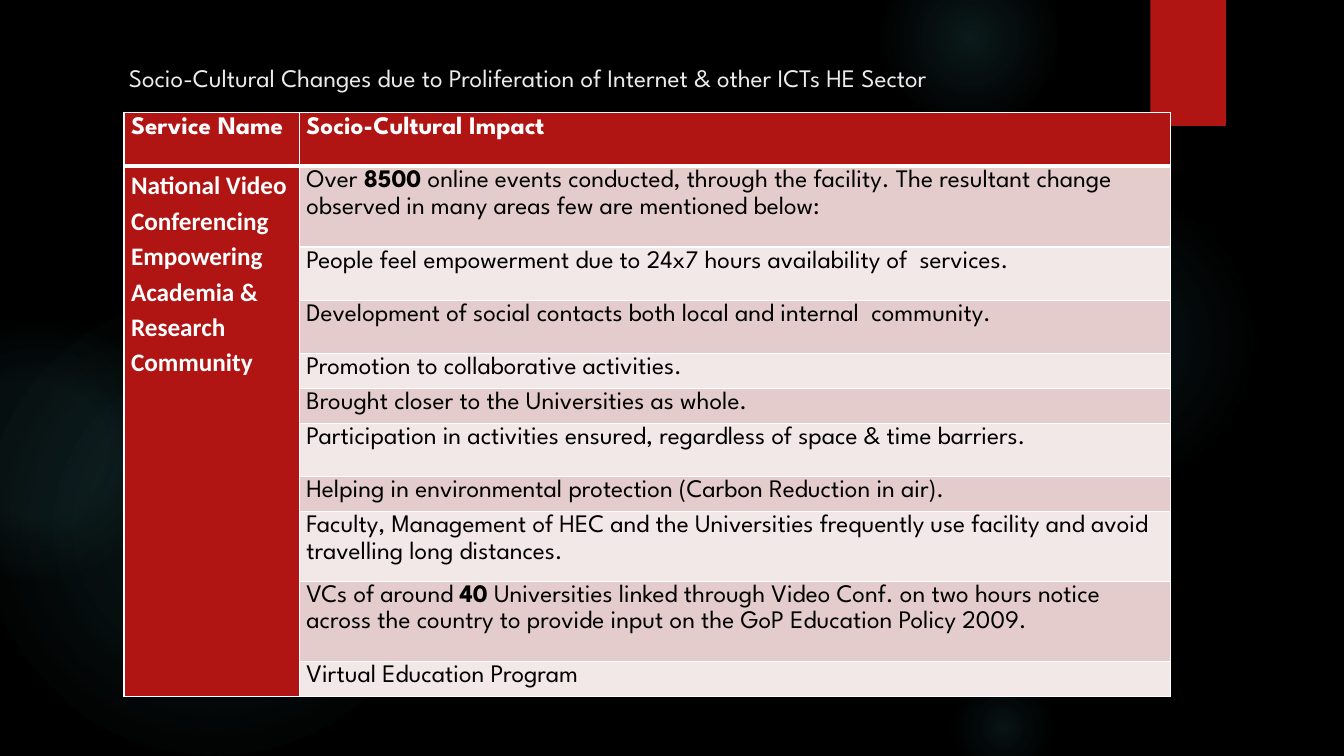
from lxml import etree
from pptx import Presentation
from pptx.dml.color import RGBColor
from pptx.enum.shapes import MSO_SHAPE
from pptx.oxml import parse_xml
from pptx.oxml.ns import nsdecls, qn
from pptx.util import Inches, Pt

HUES = {"back": "000000", "glow": "50B9C1", "red": "B01513", "title": "EBEBEB",
        "white": "FFFFFF", "ink": "000000", "dark": "E4CCCC", "pale": "F2E8E7"}
FONT, SIDE = "League Spartan", "Calibri"
TITLE = "Socio-Cultural Changes due to Proliferation of Internet & other ICTs HE Sector"
HEAD = ["Service Name", "Socio-Cultural Impact"]
NAME = "National Video Conferencing Empowering Academia & Research Community"
# Row height and text; every second piece between bars is bold.
ROWS = [
    (0.8, "Over |8500| online events conducted, through the facility. "
          "The resultant change observed in many areas few are mentioned below:"),
    (0.53, "People feel empowerment due to 24x7 hours availability of  services."),
    (0.53, "Development of social contacts both local and internal  community."),
    (0.31, "Promotion to collaborative activities."),
    (0.31, "Brought closer to the Universities as whole."),
    (0.53, "Participation in activities ensured, regardless of space & time barriers."),
    (0.31, "Helping in environmental protection (Carbon Reduction in air)."),
    (0.53, "Faculty, Management of HEC and the Universities frequently use "
           "facility and avoid travelling long distances."),
    (0.8, "VCs of around |40| Universities linked through Video Conf. on two hours "
          "notice across the country to provide input on the GoP Education Policy 2009."),
    (0.08, "Virtual Education Program"),
]
# Left, top, diameter, then (stop, opacity) in percent.
GLOWS = [
    (-0.17, 2.92, 4.58, [(0, 10), (36, 8), (75, 0)]),
    (-0.92, 3.17, 2.58, [(0, 8), (36, 8), (72, 0)]),
    (9.41, 1.83, 3.08, [(0, 7), (36, 6), (69, 0)]),
    (8.75, -0.5, 1.75, [(0, 14), (36, 7), (73, 0)]),
    (9.41, 6.67, 1.08, [(0, 11), (30, 5), (67, 0)]),
]
COLS = [1.74, 8.64]
HEAD_H = 0.53


def paint(fill, hue):
    fill.solid()
    fill.fore_color.rgb = RGBColor.from_string(HUES[hue])


def style(run, hue, font=FONT, bold=False):
    run.font.size, run.font.name, run.font.bold = Pt(18), font, bold
    run.font.color.rgb = RGBColor.from_string(HUES[hue])


def add_glow(slide, left, top, size, stops):
    dot = slide.shapes.add_shape(MSO_SHAPE.OVAL, Inches(left), Inches(top),
                                 Inches(size), Inches(size))
    dot.shadow.inherit = False
    dot.line.fill.background()
    marks = "".join(
        f'<a:gs pos="{pos * 1000}"><a:srgbClr val="{HUES["glow"]}">'
        f'<a:alpha val="{alpha * 1000}"/></a:srgbClr></a:gs>' for pos, alpha in stops)
    grad = parse_xml(
        f'<a:gradFill {nsdecls("a")} rotWithShape="1"><a:gsLst>{marks}</a:gsLst>'
        '<a:path path="circle"><a:fillToRect l="50000" t="50000" r="50000" b="50000"/>'
        '</a:path></a:gradFill>')
    dot.element.spPr.find(qn("a:prstGeom")).addnext(grad)


def add_tab(slide):
    tab = slide.shapes.add_shape(MSO_SHAPE.RECTANGLE, Inches(11.41), 0,
                                 Inches(0.75), Inches(1.25))
    tab.shadow.inherit = False
    paint(tab.fill, "red")
    tab.line.fill.background()
    cast = etree.SubElement(tab.element.spPr.find(qn("a:effectLst")), qn("a:outerShdw"),
                            blurRad=str(Pt(3)), dist=str(Pt(2)), dir="5400000")
    tint = etree.SubElement(cast, qn("a:srgbClr"), val=HUES["ink"])
    etree.SubElement(tint, qn("a:alpha"), val="45000")


def add_title(slide):
    box = slide.shapes.add_textbox(Inches(1.18), Inches(0.5), Inches(10.04), Inches(0.62))
    frame = box.text_frame
    frame.word_wrap = True
    frame.margin_top = Inches(0.12)
    frame.text = TITLE
    style(frame.paragraphs[0].runs[0], "title")


def edge(cell, low=1):
    """Draw white cell borders; low is the width of the bottom one."""
    props = cell._tc.get_or_add_tcPr()
    for spot, (side, width) in enumerate([("L", 1), ("R", 1), ("T", 1), ("B", low)]):
        props.insert(spot, parse_xml(
            f'<a:ln{side} {nsdecls("a")} w="{Pt(width)}"><a:solidFill>'
            f'<a:srgbClr val="{HUES["white"]}"/></a:solidFill></a:ln{side}>'))


def write(cell, words, hue, font=FONT, bold=False):
    para = cell.text_frame.paragraphs[0]
    para.line_spacing = 1.15
    for spot, part in enumerate(words.split("|")):
        run = para.add_run()
        run.text = part
        style(run, hue, font, bold or spot % 2 == 1)


def add_grid(slide):
    highs = [HEAD_H] + [high for high, _ in ROWS]
    grid = slide.shapes.add_table(len(highs), len(COLS), Inches(1.23), Inches(1.12),
                                  Inches(sum(COLS)), Inches(sum(highs))).table
    for col, wide in zip(grid.columns, COLS):
        col.width = Inches(wide)
    for row, high in enumerate(highs):
        grid.rows[row].height = Inches(high)
        for col in range(len(COLS)):
            cell = grid.cell(row, col)
            cell.margin_left = cell.margin_right = Inches(0.07)
            cell.margin_top = cell.margin_bottom = 0
            red = row == 0 or col == 0
            paint(cell.fill, "red" if red else "dark" if row % 2 else "pale")
            edge(cell, 1 if row else 3)
    grid.cell(1, 0).merge(grid.cell(len(ROWS), 0))
    for col, words in enumerate(HEAD):
        write(grid.cell(0, col), words, "white", bold=True)
    write(grid.cell(1, 0), NAME, "white", SIDE, True)
    for row, (_, words) in enumerate(ROWS, 1):
        write(grid.cell(row, 1), words, "ink")


def main():
    deck = Presentation()
    deck.slide_width, deck.slide_height = Inches(13.33), Inches(7.5)
    slide = deck.slides.add_slide(deck.slide_layouts[6])
    paint(slide.background.fill, "back")
    for glow in GLOWS:
        add_glow(slide, *glow)
    add_tab(slide)
    add_title(slide)
    add_grid(slide)
    deck.save("out.pptx")


if __name__ == "__main__":
    main()
